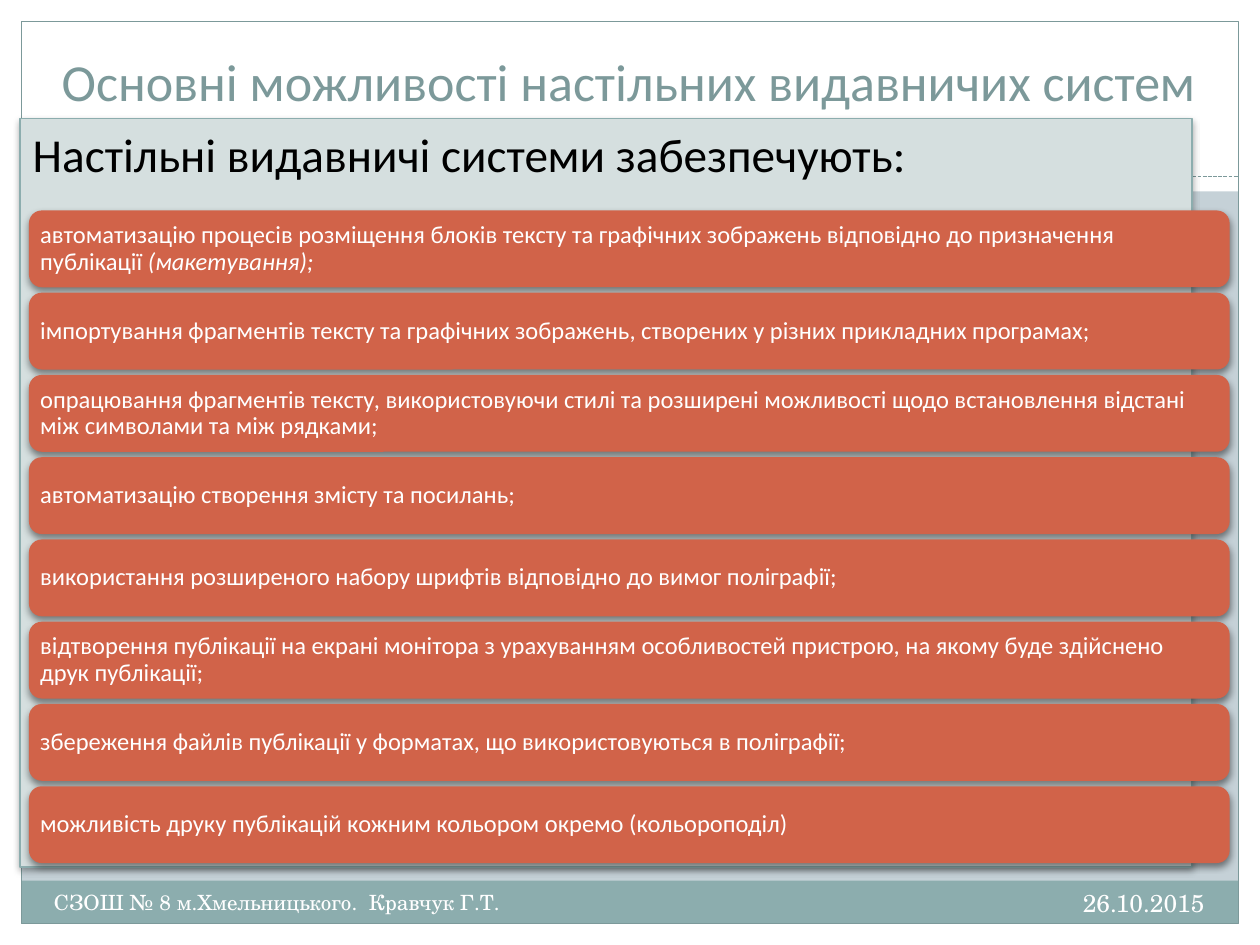
from lxml import etree
from pptx import Presentation
from pptx.dml.color import RGBColor
from pptx.enum.dml import MSO_LINE
from pptx.enum.shapes import MSO_CONNECTOR, MSO_SHAPE
from pptx.enum.text import MSO_ANCHOR, MSO_AUTO_SIZE, PP_ALIGN
from pptx.oxml.ns import qn
from pptx.util import Inches, Pt

RECTANGLE, ROUNDED = MSO_SHAPE.RECTANGLE, MSO_SHAPE.ROUNDED_RECTANGLE
STRAIGHT, DASH = MSO_CONNECTOR.STRAIGHT, MSO_LINE.SQUARE_DOT
LEFT, CENTER, RIGHT = PP_ALIGN.LEFT, PP_ALIGN.CENTER, PP_ALIGN.RIGHT
TOP, MIDDLE, BOTTOM = MSO_ANCHOR.TOP, MSO_ANCHOR.MIDDLE, MSO_ANCHOR.BOTTOM
NO_FIT = MSO_AUTO_SIZE.NONE

WHITE, BLACK, SLATE, TEAL = "FFFFFF", "000000", "7C999A", "8CADAE"
PAPER, PANEL, RUST = "C5D1D7", "D5DFDF", "D16349"
SANS, SERIF = "Calibri", "TeX Gyre Schola"

TITLE = "Основні можливості настільних видавничих систем"
LEAD = "Настільні видавничі системи забезпечують:"
AUTHOR = "СЗОШ № 8 м.Хмельницького.  Кравчук Г.Т."
DATE = "26.10.2015"
FEATURES = [
    ("автоматизацію процесів розміщення блоків тексту та графічних зображень "
     "відповідно до призначення публікації", " (макетування);"),
    ("імпортування фрагментів тексту та графічних зображень, створених у різних "
     "прикладних програмах;",),
    ("опрацювання фрагментів тексту, використовуючи стилі та розширені можливості "
     "щодо встановлення відстані між символами та між рядками;",),
    ("автоматизацію створення змісту та посилань;",),
    ("використання розширеного набору шрифтів відповідно до вимог поліграфії;",),
    ("відтворення публікації на екрані монітора з урахуванням особливостей пристрою, "
     "на якому буде здійснено друк публікації;",),
    ("збереження файлів публікації у форматах, що використовуються в поліграфії;",),
    ("можливість друку публікацій кожним кольором окремо (кольороподіл)",),
]


def color(value):
    return RGBColor.from_string(value)


def write_text(shape, text, size, font=SANS, ink=WHITE, align=LEFT, anchor=TOP,
               inset=None, spacing=None, italic_tail=""):
    frame = shape.text_frame
    frame.word_wrap = True
    frame.auto_size = NO_FIT
    frame.vertical_anchor = anchor
    if inset is not None:
        frame.margin_left = frame.margin_right = Inches(inset)
        frame.margin_top = frame.margin_bottom = Inches(inset)
    para = frame.paragraphs[0]
    para.alignment = align
    if spacing:
        para.line_spacing = spacing
    for part, italic in ((text, False), (italic_tail, True)):
        if part:
            span = para.add_run()
            span.text = part
            span.font.name = font
            span.font.size = Pt(size)
            span.font.italic = italic
            span.font.color.rgb = color(ink)


def paint(shape, fill=None, line=None):
    if fill:
        shape.fill.solid()
        shape.fill.fore_color.rgb = color(fill)
    else:
        shape.fill.background()
    if line:
        shape.line.color.rgb = color(line)
        shape.line.width = Pt(0.75)
    else:
        shape.line.fill.background()


def add_box(page, box, kind=RECTANGLE, **colors):
    shape = page.shapes.add_shape(kind, *map(Inches, box))
    shape.shadow.inherit = False
    paint(shape, **colors)
    return shape


def cast_shadow(shape, opacity):
    """Give the shape a soft shadow straight below it."""
    shape.shadow.inherit = False
    effects = shape.element.spPr.find(qn("a:effectLst"))
    shadow = etree.SubElement(effects, qn("a:outerShdw"), blurRad=str(Pt(4)),
                              dist=str(Pt(2)), dir="5400000", rotWithShape="0")
    ink = etree.SubElement(shadow, qn("a:srgbClr"), val=BLACK)
    etree.SubElement(ink, qn("a:alpha"), val=str(opacity * 1000))


def place(shape, box):
    """Move a placeholder to the box and in front of everything drawn so far."""
    shape.left, shape.top, shape.width, shape.height = map(Inches, box)
    shape.element.getparent().append(shape.element)


def draw_frame(page, box):
    left, top, width, height = box
    right, bottom = left + width, top + height
    for band in ((0, bottom, 10, top), (0, 0, 10, 1.52),
                 (0, 0, left, 7.5), (right, 0, left, 7.5)):
        add_box(page, band, fill=WHITE)
    add_box(page, (left, bottom - 0.34, width, 0.34), fill=TEAL)
    add_box(page, box, line=SLATE)
    rule = page.shapes.add_connector(STRAIGHT, *map(Inches, (left, 1.4, right, 1.4)))
    rule.line.color.rgb = color(SLATE)
    rule.line.width = Pt(0.75)
    rule.line.dash_style = DASH
    etree.SubElement(rule.element.spPr, qn("a:effectLst"))


def draw_title(page, box):
    title = page.shapes.title
    place(title, box)
    write_text(title, TITLE, 29.7, ink=SLATE, align=CENTER, anchor=BOTTOM)


def draw_footer(page, box):
    left, top, width, height = box
    date_width, author_width = 3.33, 3.92
    date = page.shapes.add_textbox(*map(Inches, (left + width - date_width, top,
                                                 date_width, height)))
    write_text(date, DATE, 14, font=SERIF, align=RIGHT)
    author = page.shapes.add_textbox(*map(Inches, (left, top + 0.01, author_width, height)))
    write_text(author, AUTHOR, 12, font=SERIF)


def draw_panel(page, box):
    panel = page.placeholders[1]
    place(panel, box)
    paint(panel, fill=PANEL, line=TEAL)
    cast_shadow(panel, 35)
    write_text(panel, LEAD, 27, ink=BLACK)
    layout = panel.text_frame.paragraphs[0]._p.get_or_add_pPr()
    layout.set("marL", "0")
    layout.set("indent", "0")
    etree.SubElement(layout, qn("a:buNone"))


def draw_features(page, box):
    left, top, width, height = box
    bar_height = 0.61
    pitch = (height - bar_height) / (len(FEATURES) - 1)
    for row, (text, *tail) in enumerate(FEATURES):
        bar = add_box(page, (left, top + row * pitch, width, bar_height), ROUNDED, fill=RUST)
        cast_shadow(bar, 45)
        write_text(bar, text, 14, anchor=MIDDLE, inset=0.06, spacing=0.9,
                   italic_tail="".join(tail))


def main():
    deck = Presentation()
    deck.slide_width, deck.slide_height = Inches(10), Inches(7.5)
    page = deck.slides.add_slide(deck.slide_layouts[1])
    page.background.fill.solid()
    page.background.fill.fore_color.rgb = color(PAPER)
    draw_frame(page, (0.17, 0.17, 9.66, 7.16))
    draw_title(page, (0.33, 0.16, 9.33, 0.78))
    draw_footer(page, (0.33, 7, 9.33, 0.4))
    draw_panel(page, (0.16, 0.94, 9.3, 5.94))
    draw_features(page, (0.23, 1.67, 9.53, 5.18))
    deck.save("out.pptx")


if __name__ == "__main__":
    main()
